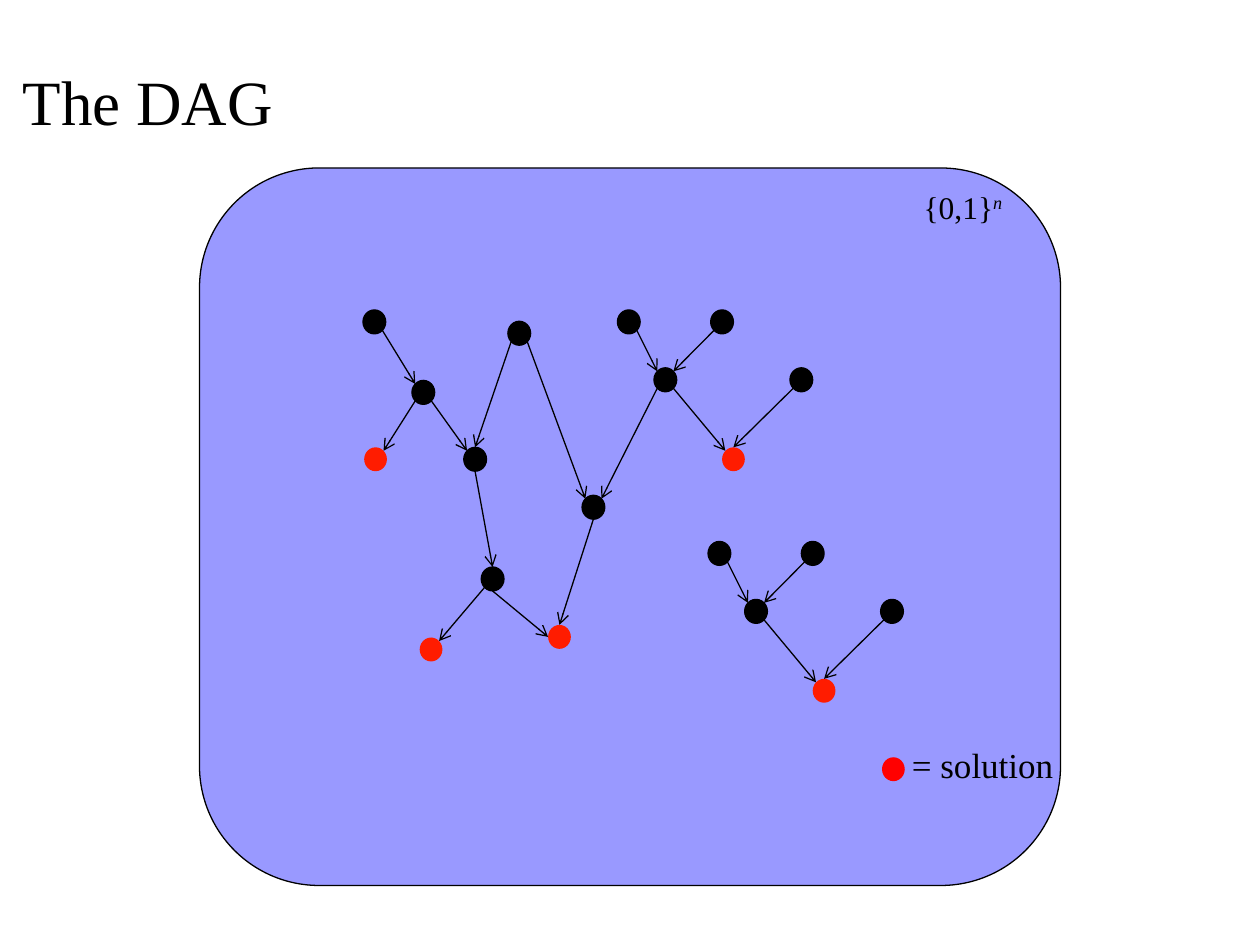
from math import sqrt
from typing import NamedTuple

from pptx import Presentation
from pptx.dml.color import RGBColor
from pptx.enum.shapes import MSO_CONNECTOR, MSO_SHAPE
from pptx.enum.text import MSO_ANCHOR, MSO_AUTO_SIZE, PP_ALIGN
from pptx.oxml.ns import qn
from pptx.util import Pt
from lxml.etree import SubElement

FONT = "Times New Roman"
HEX = {"ink": "000000", "space": "9999FF", "sink": "FF1C00", "key": "FF0000"}
WIDE, HIGH = 13, 13.7  # size of a node
DIAG = sqrt(0.5)
SIDES = {"t": (0, -1), "b": (0, 1), "l": (-1, 0),
         "tl": (-DIAG, -DIAG), "tr": (DIAG, -DIAG),
         "bl": (-DIAG, DIAG), "br": (DIAG, DIAG)}


class Node(NamedTuple):
    left: float
    top: float
    sink: bool = False

    def site(self, side: str) -> tuple:
        """Point on the rim of the node, in points."""
        x, y = SIDES[side]
        return (self.left + WIDE / 2 * (1 + x), self.top + HIGH / 2 * (1 + y))


class Edge(NamedTuple):
    start: str
    exit: str
    end: str
    entry: str


# Five-node branch that occurs twice
BRANCH = {"left": Node(352.8, 177.1), "right": Node(406.1, 177.1),
          "mid": Node(373.7, 210.2), "far": Node(451.4, 210.2),
          "goal": Node(412.6, 255.6, True)}
BRANCH_EDGES = [Edge("left", "br", "mid", "tl"), Edge("right", "bl", "mid", "tr"),
                Edge("mid", "br", "goal", "tl"), Edge("far", "bl", "goal", "t")]
LOWER = {name: node._replace(left=node.left + 51.8, top=node.top + 132.3)
         for name, node in BRANCH.items()}

# Main graph, which takes in the upper branch
MAIN = BRANCH | {
    "a": Node(207.4, 177.1), "b": Node(235.4, 217.4), "c": Node(290.2, 183.6),
    "d": Node(265, 255.6), "e": Node(208.1, 255.6, True), "f": Node(275, 324),
    "g": Node(239.8, 364.3, True), "h": Node(313.2, 357.1, True),
    "i": Node(332.6, 283)}
MAIN_EDGES = BRANCH_EDGES + [
    Edge("a", "br", "b", "tl"), Edge("b", "bl", "e", "tr"),
    Edge("b", "br", "d", "tl"), Edge("c", "bl", "d", "t"),
    Edge("c", "br", "i", "tl"), Edge("d", "b", "f", "t"),
    Edge("f", "bl", "g", "tr"), Edge("f", "b", "h", "l"),
    Edge("i", "b", "h", "t"), Edge("mid", "bl", "i", "tr")]


def paint(name: str) -> RGBColor:
    return RGBColor.from_string(HEX[name])


def style(font, size: float) -> None:
    font.name, font.size = FONT, Pt(size)
    font.color.rgb = paint("ink")


def add_form(slide, kind, box: tuple, fill: str, edge: bool):
    form = slide.shapes.add_shape(kind, *map(Pt, box))
    form.shadow.inherit = False
    form.fill.solid()
    form.fill.fore_color.rgb = paint(fill)
    if edge:
        form.line.color.rgb = paint("ink")
        form.line.width = Pt(0.75)
    else:
        form.line.fill.background()
    return form


def add_node(slide, node: Node, fill: str) -> None:
    add_form(slide, MSO_SHAPE.OVAL, (node.left, node.top, WIDE, HIGH),
             fill, not node.sink)


def add_arrow(slide, start: tuple, end: tuple) -> None:
    line = slide.shapes.add_connector(MSO_CONNECTOR.STRAIGHT,
                                      *map(Pt, start + end))
    line.line.color.rgb = paint("ink")
    line.line.width = Pt(0.75)
    SubElement(line.line._get_or_add_ln(), qn("a:tailEnd"), type="arrow")
    SubElement(line._element.spPr, qn("a:effectLst"))


def add_graph(slide, nodes: dict, edges: list) -> None:
    for node in nodes.values():
        add_node(slide, node, "sink" if node.sink else "ink")
    for edge in edges:
        add_arrow(slide, nodes[edge.start].site(edge.exit),
                  nodes[edge.end].site(edge.entry))


def add_label(slide, box: tuple, text: str, size: float, wrap: bool):
    frame = slide.shapes.add_textbox(*map(Pt, box)).text_frame
    frame.text = text
    frame.word_wrap = wrap
    frame.auto_size = MSO_AUTO_SIZE.SHAPE_TO_FIT_TEXT
    para = frame.paragraphs[0]
    style(para.runs[0].font, size)
    return para


def main() -> None:
    deck = Presentation()
    deck.slide_width, deck.slide_height = Pt(720), Pt(540)
    slide = deck.slides.add_slide(deck.slide_layouts[5])

    # Title
    title = slide.shapes.title
    title.left, title.top, title.width, title.height = map(
        Pt, (5.8, 12.2, 689.8, 90))
    frame = title.text_frame
    frame.text = "The DAG"
    frame.vertical_anchor = MSO_ANCHOR.MIDDLE
    frame.paragraphs[0].alignment = PP_ALIGN.LEFT
    style(frame.paragraphs[0].runs[0].font, 36)

    # Search space and its name
    add_form(slide, MSO_SHAPE.ROUNDED_RECTANGLE, (114, 96, 492, 410),
             "space", True)
    para = add_label(slide, (465, 103.7, 170.6, 28.8), "{0,1}", 18, True)
    para.alignment = PP_ALIGN.CENTER
    power = para.add_run()
    power.text = "n"
    style(power.font, 18)
    power.font.italic = True
    power.font._element.set("baseline", "30000")

    # Graphs
    add_graph(slide, MAIN, MAIN_EDGES)
    add_graph(slide, LOWER, BRANCH_EDGES)

    # Key
    add_node(slide, Node(504, 432.7, True), "key")
    add_label(slide, (514, 421.2, 95.8, 31.5), "= solution", 20, False)

    deck.save("out.pptx")


if __name__ == "__main__":
    main()
